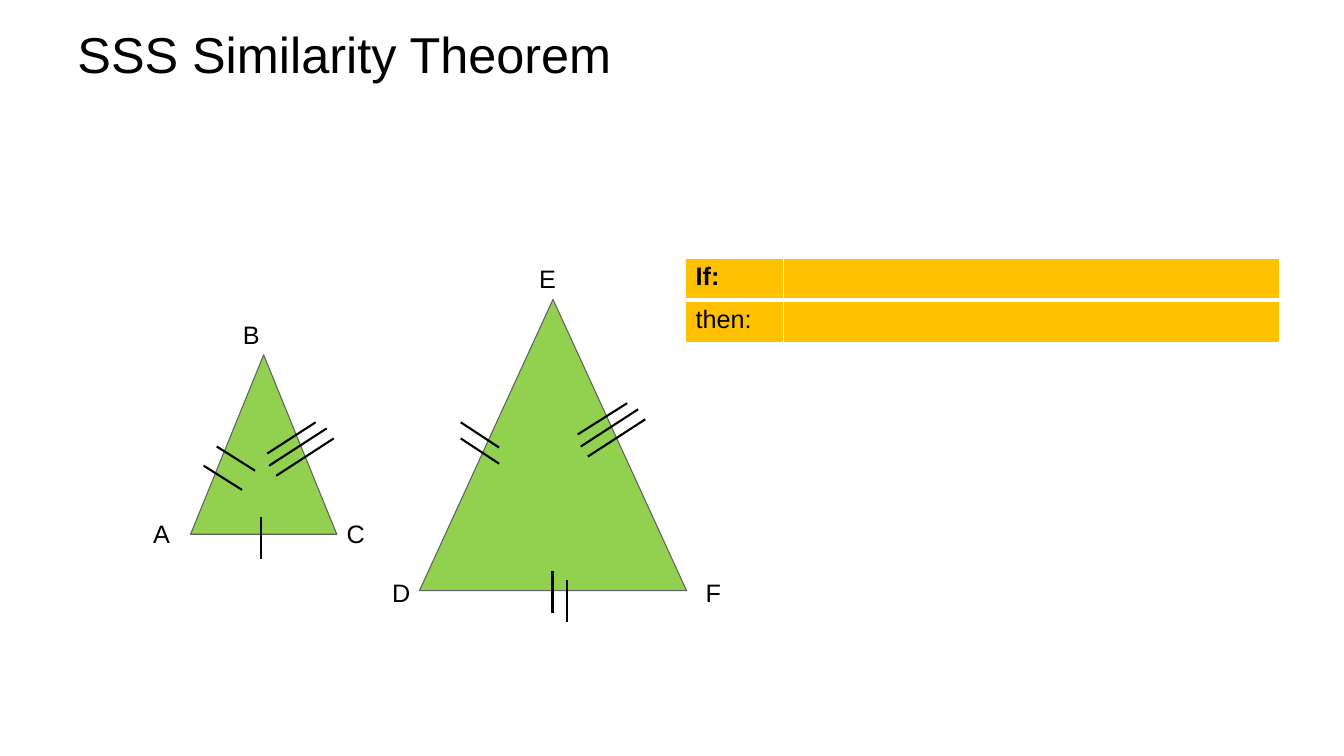
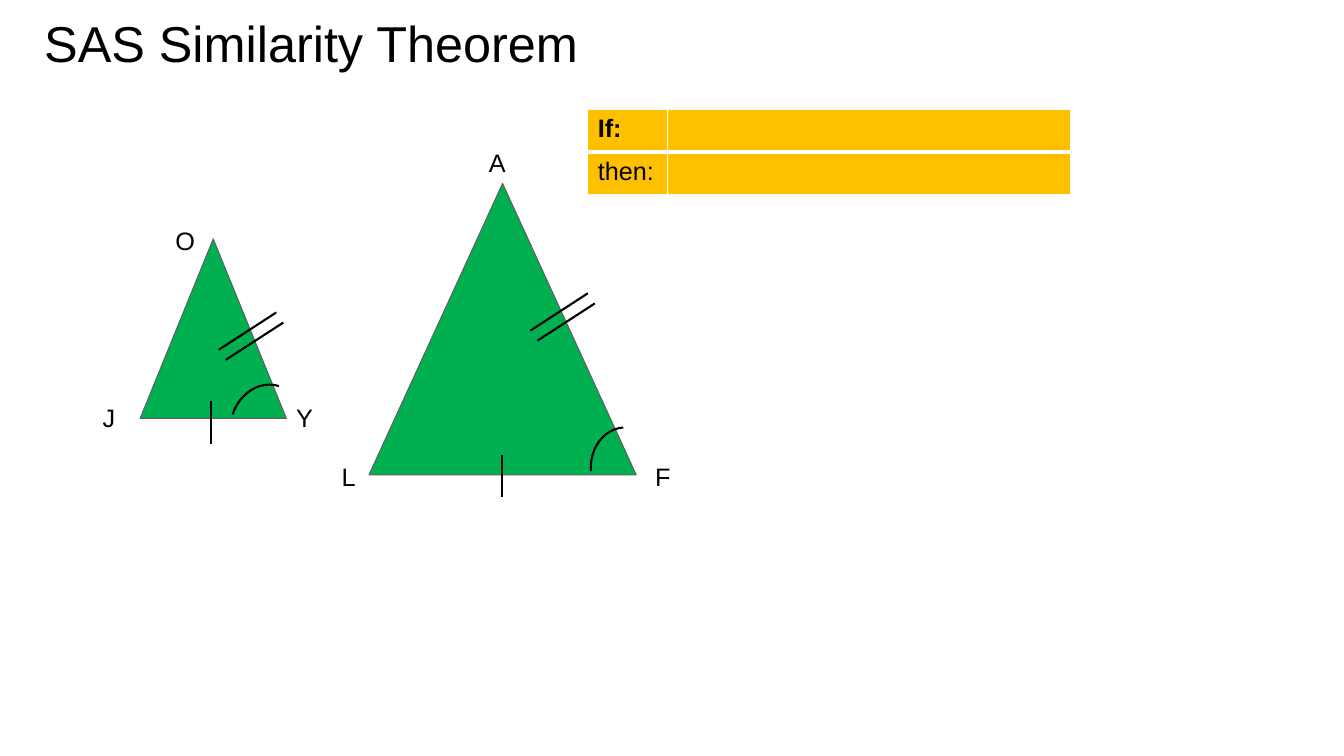
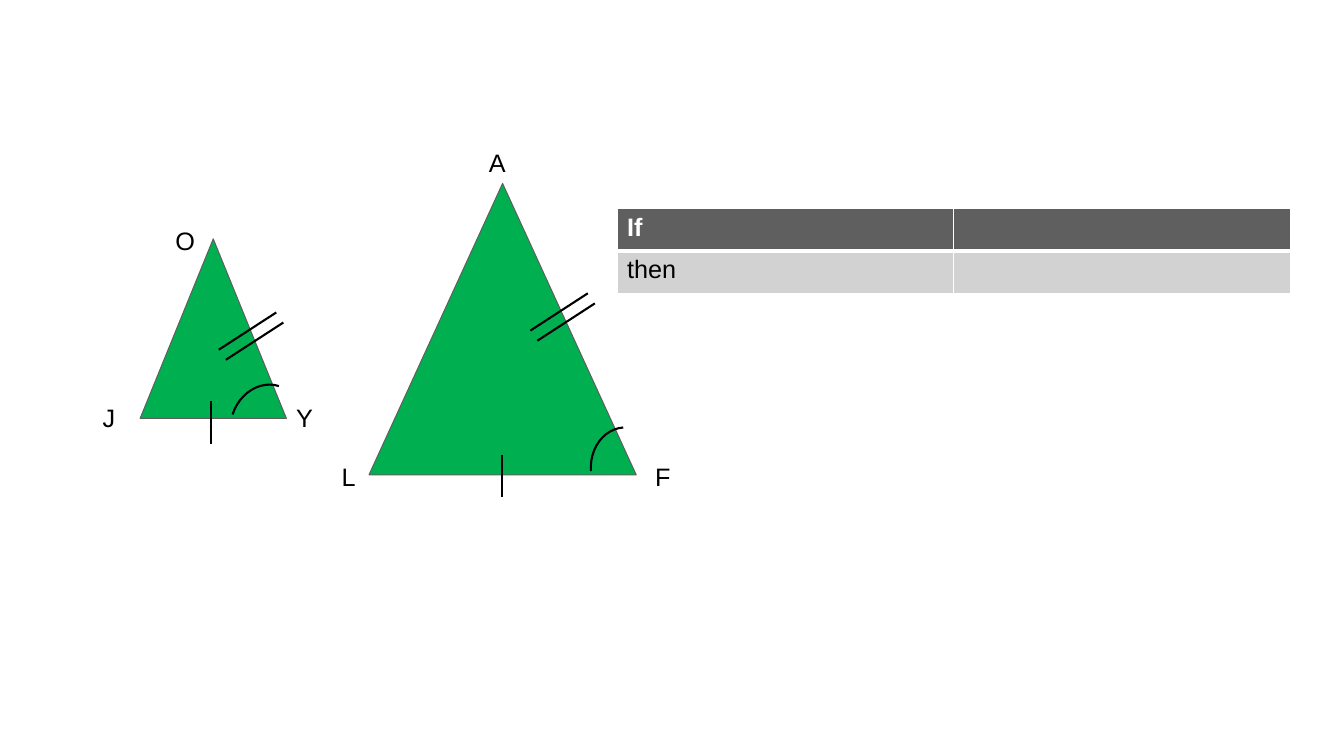
"""Build three slides on the SSS and SAS triangle similarity theorems."""
from lxml import etree
from pptx import Presentation
from pptx.dml.color import RGBColor
from pptx.enum import shapes, text
from pptx.oxml import ns
from pptx.util import Inches, Pt

FONT = "Arial"
COLORS = {
    "black": "000000", "white": "FFFFFF", "outline": "5F5F5F",
    "lime": "92D050", "green": "00B050", "amber": "FFC000",
    "dark": "5F5F5F", "light": "D2D2D2",
}
TRIANGLES = [(1.39, 2.37, 1.45, 1.78), (3.66, 1.82, 2.65, 2.89)]
CORNERS = [(0.92, 3.94, 0.6), None, (2.84, 3.94, 0.6),
           (3.29, 4.53, 0.47), (4.75, 1.41, 0.47), (6.4, 4.53, 0.47)]
SHARED_TICKS = [
    (2.09, 3.98, 2.09, 4.4), (4.98, 4.51, 4.98, 4.93),
    (2.74, 3.1, 2.17, 3.47), (2.81, 3.2, 2.24, 3.57),
    (5.83, 2.91, 5.26, 3.28), (5.9, 3.01, 5.33, 3.38),
]
SSS_TICKS = [
    (4.45, 3.45, 4.07, 3.2), (4.45, 3.29, 4.07, 3.04),
    (1.9, 3.71, 1.52, 3.47), (2.03, 3.52, 1.65, 3.28),
    (2.63, 3.04, 2.15, 3.35), (5.72, 2.85, 5.23, 3.16),
    (5.12, 4.6, 5.12, 5.02),
]
ANGLE_ARCS = [(2.23, 3.87, 288), (5.8, 4.3, 266)]
SAS_FIGURE = {
    "offset": (0, 0), "fill": "green", "letters": "JOYLAF",
    "small_apex": (1.64, 2.19, 0.6), "ticks": SHARED_TICKS, "arcs": ANGLE_ARCS,
}
SLIDES = [
    {"title": ("SSS Similarity Theorem", 0.67, 0.21),
     "offset": (0.5, 1.15), "fill": "lime", "letters": "ABCDEF",
     "small_apex": (1.81, 1.97, 0.6), "ticks": SHARED_TICKS + SSS_TICKS, "arcs": [],
     "table": (6.8, 2.56), "columns": (0.97, 4.92),
     "rows": [("If:", "amber", "black"), ("then:", "amber", "black")]},
    {**SAS_FIGURE, "title": ("SAS Similarity Theorem", 0.34, 0.1),
     "table": (5.83, 1.09), "columns": (0.79, 4),
     "rows": [("If:", "amber", "black"), ("then:", "amber", "black")]},
    {**SAS_FIGURE, "title": None,
     "table": (6.12, 2.07), "columns": (3.34, 3.34),
     "rows": [("If", "dark", "white"), ("then", "light", "black")]},
]
ROW_HEIGHT = 0.42


def rgb(name):
    return RGBColor.from_string(COLORS[name])


def write(frame, words, size, color="black", bold=False):
    frame.word_wrap = True
    paragraph = frame.paragraphs[0]
    paragraph.text = words
    paragraph.font.name = FONT
    paragraph.font.size = Pt(size)
    paragraph.font.bold = bold
    paragraph.font.color.rgb = rgb(color)


presentation = Presentation()
presentation.slide_width = Inches(13.33)
presentation.slide_height = Inches(7.5)

for content in SLIDES:
    slide = presentation.slides.add_slide(presentation.slide_layouts[6])
    dx, dy = content["offset"]

    if content["title"]:
        words, left, top = content["title"]
        title = slide.shapes.add_textbox(Inches(left), Inches(top), Inches(12), Inches(0.64))
        title.text_frame.vertical_anchor = text.MSO_ANCHOR.MIDDLE
        write(title.text_frame, words, 36)

    for left, top, width, height in TRIANGLES:
        triangle = slide.shapes.add_shape(
            shapes.MSO_SHAPE.ISOSCELES_TRIANGLE,
            Inches(left + dx), Inches(top + dy), Inches(width), Inches(height))
        triangle.shadow.inherit = False
        triangle.fill.solid()
        triangle.fill.fore_color.rgb = rgb(content["fill"])
        triangle.line.color.rgb = rgb("outline")
        triangle.line.width = Pt(0.75)

    for letter, corner in zip(content["letters"], CORNERS):
        left, top, width = corner or content["small_apex"]
        label = slide.shapes.add_textbox(
            Inches(left + dx), Inches(top + dy), Inches(width), Inches(0.4))
        write(label.text_frame, letter, 18)

    for x1, y1, x2, y2 in content["ticks"]:
        tick = slide.shapes.add_connector(
            shapes.MSO_CONNECTOR.STRAIGHT,
            Inches(x1 + dx), Inches(y1 + dy), Inches(x2 + dx), Inches(y2 + dy))
        tick.line.color.rgb = rgb("black")
        tick.line.width = Pt(1.5)
        etree.SubElement(tick._element.spPr, ns.qn("a:effectLst"))

    for left, top, rotation in content["arcs"]:
        arc = slide.shapes.add_shape(
            shapes.MSO_SHAPE.ARC, Inches(left), Inches(top), Inches(0.82), Inches(0.7))
        arc.rotation = rotation
        arc.shadow.inherit = False
        arc.fill.background()
        arc.line.color.rgb = rgb("black")
        arc.line.width = Pt(1.5)

    left, top = content["table"]
    columns = content["columns"]
    table = slide.shapes.add_table(
        2, 2, Inches(left), Inches(top), Inches(sum(columns)), Inches(2 * ROW_HEIGHT)).table
    table.horz_banding = False
    for column, width in zip(table.columns, columns):
        column.width = Inches(width)
    for index, (words, fill, color) in enumerate(content["rows"]):
        table.rows[index].height = Inches(ROW_HEIGHT)
        header = index == 0
        borders = {"L": 1, "R": 1, "T": 1 if header else 3, "B": 3 if header else 1}
        for cell, cell_words in zip(table.rows[index].cells, (words, "")):
            properties = cell._tc.get_or_add_tcPr()
            for side, width in borders.items():
                border = etree.SubElement(properties, ns.qn(f"a:ln{side}"), w=str(Pt(width)))
                solid = etree.SubElement(border, ns.qn("a:solidFill"))
                etree.SubElement(solid, ns.qn("a:srgbClr"), val=COLORS["white"])
            cell.fill.solid()
            cell.fill.fore_color.rgb = rgb(fill)
            write(cell.text_frame, cell_words, 18, color, bold=header)

presentation.save("out.pptx")
